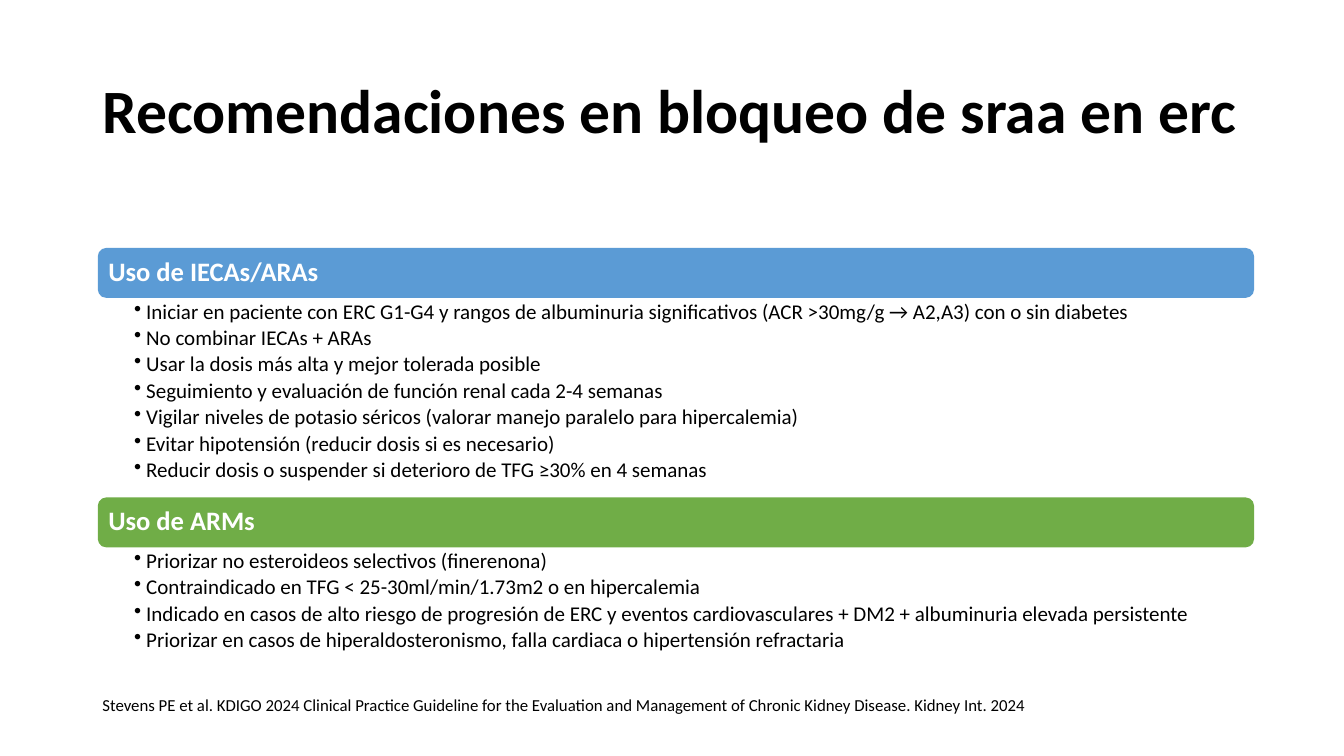
from lxml import etree
from pptx import Presentation, util as u
from pptx.dml.color import RGBColor
from pptx.enum import shapes, text
from pptx.oxml import ns

BLACK = RGBColor(0x00, 0x00, 0x00)
WHITE = RGBColor(0xFF, 0xFF, 0xFF)
BLUE = RGBColor(0x5B, 0x9B, 0xD5)
GREEN = RGBColor(0x70, 0xAD, 0x47)

presentation = Presentation()
presentation.slide_width = u.Inches(13.333)
presentation.slide_height = u.Inches(7.5)
slide = presentation.slides.add_slide(presentation.slide_layouts[6])
column = presentation.slide_width / 100
row = presentation.slide_height / 100


def place(left, top, width, height):
    return [int(size) for size in (left * column, top * row, width * column, height * row)]


def write(shape, lines, size, color=BLACK, bold=False, spacing=0.9,
          anchor=text.MSO_ANCHOR.MIDDLE, insets=(0.1, 0.05, 0.1, 0.05)):
    frame = shape.text_frame
    frame.word_wrap = True
    frame.vertical_anchor = anchor
    (frame.margin_left, frame.margin_top,
     frame.margin_right, frame.margin_bottom) = map(u.Inches, insets)
    frame.text = "\n".join(lines)
    for paragraph in frame.paragraphs:
        paragraph.alignment = text.PP_ALIGN.LEFT
        paragraph.line_spacing = spacing
        paragraph.font.name = "Calibri"
        paragraph.font.size = u.Pt(size)
        paragraph.font.bold = bold
        paragraph.font.color.rgb = color
    return frame.paragraphs


title = slide.shapes.add_textbox(*place(6.88, 5.32, 86.25, 19.33))
write(title, ["Recomendaciones en bloqueo de sraa en erc"], 44, bold=True)

sections = [
    ("Uso de IECAs/ARAs", BLUE, 26.4, [
        "Iniciar en paciente con ERC G1-G4 y rangos de albuminuria significativos "
        "(ACR >30mg/g → A2,A3) con o sin diabetes",
        "No combinar IECAs + ARAs",
        "Usar la dosis más alta y mejor tolerada posible",
        "Seguimiento y evaluación de función renal cada 2-4 semanas",
        "Vigilar niveles de potasio séricos (valorar manejo paralelo para hipercalemia)",
        "Evitar hipotensión (reducir dosis si es necesario)",
        "Reducir dosis o suspender si deterioro de TFG ≥30% en 4 semanas",
    ]),
    ("Uso de ARMs", GREEN, 15.2, [
        "Priorizar no esteroideos selectivos (finerenona)",
        "Contraindicado en TFG < 25-30ml/min/1.73m2 o en hipercalemia",
        "Indicado en casos de alto riesgo de progresión de ERC y eventos "
        "cardiovasculares + DM2 + albuminuria elevada persistente",
        "Priorizar en casos de hiperaldosteronismo, falla cardiaca o hipertensión refractaria",
    ]),
]

section_left, section_width, header_height = 7.28, 86.03, 6.6
top = 32.8
for heading, color, list_height, recommendations in sections:
    header = slide.shapes.add_shape(
        shapes.MSO_SHAPE.ROUNDED_RECTANGLE,
        *place(section_left, top, section_width, header_height))
    header.shadow.inherit = False
    header.fill.solid()
    header.fill.fore_color.rgb = color
    header.line.fill.background()
    write(header, [heading], 19, WHITE, True, insets=(0.08, 0.05, 0.08, 0.05))
    top += header_height

    bullet_list = slide.shapes.add_textbox(
        *place(section_left, top, section_width, list_height))
    paragraphs = write(bullet_list, recommendations, 15,
                       anchor=text.MSO_ANCHOR.TOP, insets=(0.36, 0.03, 0.15, 0.03))
    for paragraph in paragraphs:
        paragraph.space_after = u.Pt(2.7)
        properties = paragraph._p.get_or_add_pPr()
        properties.set("marL", str(u.Inches(0.12)))
        properties.set("indent", str(u.Inches(-0.12)))
        bullet = etree.Element(ns.qn("a:buChar"), char="•")
        properties.find(ns.qn("a:defRPr")).addprevious(bullet)
    top += list_height

citation = slide.shapes.add_textbox(*place(6.88, 90.27, 86.25, 6))
write(citation, ["Stevens PE et al. KDIGO 2024 Clinical Practice Guideline for the Evaluation "
                 "and Management of Chronic Kidney Disease. Kidney Int. 2024"], 12, spacing=1.0)

presentation.save("out.pptx")
